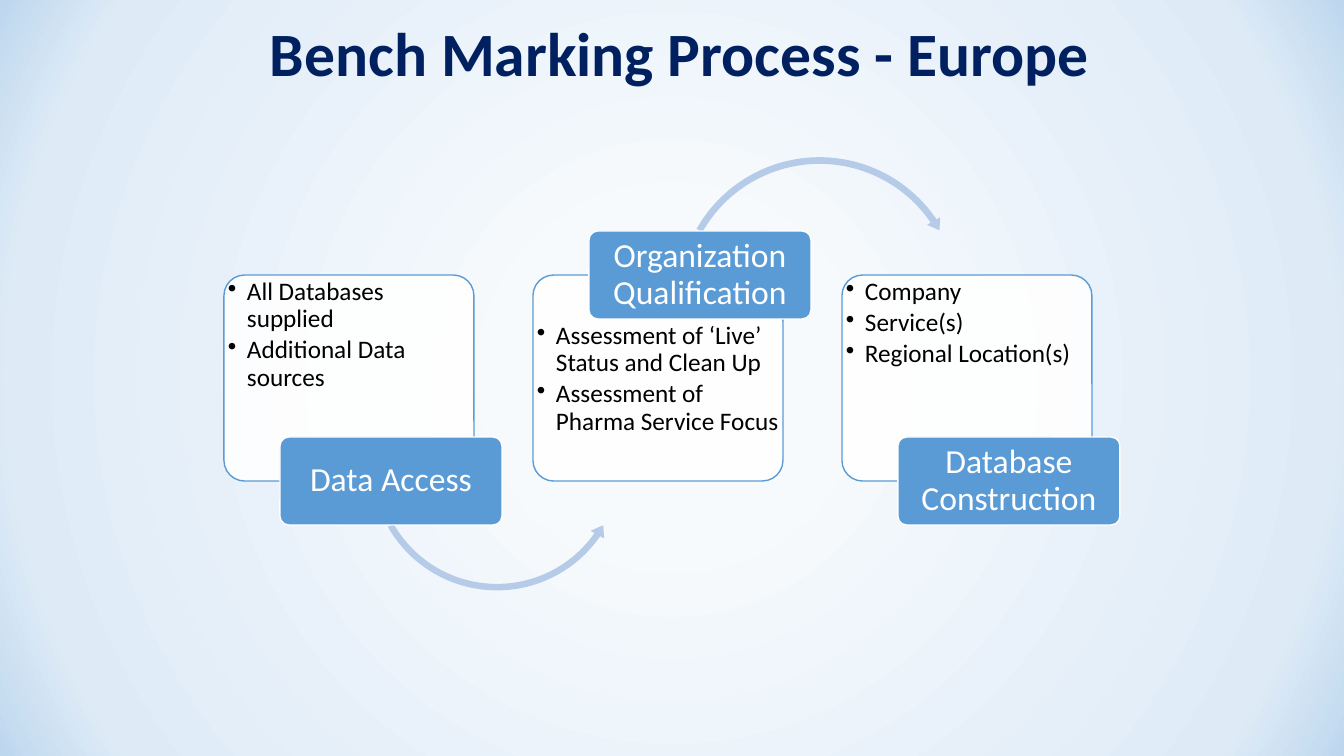
from dataclasses import dataclass

from lxml.etree import SubElement
from pptx import Presentation
from pptx.dml.color import RGBColor
from pptx.enum.shapes import MSO_SHAPE
from pptx.enum.text import MSO_ANCHOR, PP_ALIGN
from pptx.oxml import parse_xml
from pptx.oxml.ns import nsdecls, qn
from pptx.util import Pt

EMU_PER_PX = 914400 / 100.8


def px(length):
    return round(length * EMU_PER_PX)


@dataclass(frozen=True)
class Theme:
    font: str = "Calibri"
    navy: str = "002060"
    blue: str = "5B9BD5"
    pale_blue: str = "B5CBE7"
    white: str = "FFFFFF"
    black: str = "000000"
    glow: tuple = ((20, "F7FAFD"), (86, "DEEBF7"), (100, "BDD7EE"))
    title_size: int = 44
    label_size: int = 24
    body_size: int = 18


def write_text(frame, lines, *, font, size, color, bold=False, align=PP_ALIGN.LEFT,
               anchor=MSO_ANCHOR.TOP, inset=(4, 4), bullet_indent=0, space_after=0):
    """Fill a text frame with one paragraph for each line."""
    frame.word_wrap = True
    frame.vertical_anchor = anchor
    frame.margin_left = frame.margin_right = px(inset[0])
    frame.margin_top = frame.margin_bottom = px(inset[1])
    for number, line in enumerate(lines):
        paragraph = frame.add_paragraph() if number else frame.paragraphs[0]
        if bullet_indent:
            properties = paragraph._p.get_or_add_pPr()
            properties.set("marL", str(px(bullet_indent)))
            properties.set("indent", str(-px(bullet_indent)))
            SubElement(properties, qn("a:buChar")).set("char", "•")
        paragraph.alignment = align
        paragraph.line_spacing = 0.9
        paragraph.space_after = Pt(space_after)
        run = paragraph.add_run()
        run.text = line
        run.font.name = font
        run.font.size = Pt(size)
        run.font.bold = bold
        run.font.color.rgb = RGBColor.from_string(color)


class ProcessSlide:
    def __init__(self, presentation, theme):
        self.theme = theme
        self.slide = presentation.slides.add_slide(presentation.slide_layouts[6])

    def background(self):
        self.slide.background.fill.solid()
        solid = self.slide.element.find(".//" + qn("p:bgPr")).find(qn("a:solidFill"))
        stops = "".join(
            f'<a:gs pos="{percent * 1000}"><a:srgbClr val="{color}"/></a:gs>'
            for percent, color in self.theme.glow)
        glow = parse_xml(
            f'<a:gradFill {nsdecls("a")} rotWithShape="1"><a:gsLst>{stops}</a:gsLst>'
            '<a:path path="circle"><a:fillToRect l="50000" t="50000" r="50000" b="50000"/>'
            '</a:path></a:gradFill>')
        solid.getparent().replace(solid, glow)

    def text(self, lines, box, **style):
        textbox = self.slide.shapes.add_textbox(*map(px, box))
        write_text(textbox.text_frame, lines, font=self.theme.font, **style)

    def shape(self, preset, box, fill, adjustments, line=None, opacity=100):
        shape = self.slide.shapes.add_shape(preset, *map(px, box))
        shape.shadow.inherit = False
        for index, value in enumerate(adjustments):
            shape.adjustments[index] = value
        shape.fill.solid()
        shape.fill.fore_color.rgb = RGBColor.from_string(fill)
        if opacity < 100:
            color = shape.element.spPr.find(qn("a:solidFill"))[0]
            SubElement(color, qn("a:alpha")).set("val", str(opacity * 1000))
        if line:
            shape.line.color.rgb = RGBColor.from_string(line)
            shape.line.width = Pt(1)
        else:
            shape.line.fill.background()
        return shape

    def title(self, heading):
        self.text([heading], (53, 18, 1254, 77), size=self.theme.title_size,
                  color=self.theme.navy, bold=True, align=PP_ALIGN.CENTER,
                  anchor=MSO_ANCHOR.MIDDLE)

    def card(self, points, box, text_top):
        left, _, width, _ = box
        self.shape(MSO_SHAPE.ROUNDED_RECTANGLE, box, self.theme.white, [0.1],
                   line=self.theme.blue, opacity=90)
        self.text(points, (left, text_top, width, 162), size=self.theme.body_size,
                  color=self.theme.black, bullet_indent=19, space_after=2.7)

    def label(self, name, box):
        label = self.shape(MSO_SHAPE.ROUNDED_RECTANGLE, box, self.theme.blue, [0.1],
                           line=self.theme.white)
        write_text(label.text_frame, [name], font=self.theme.font,
                   size=self.theme.label_size, color=self.theme.white,
                   align=PP_ALIGN.CENTER, anchor=MSO_ANCHOR.MIDDLE, inset=(5, 3))

    def arrow(self, preset, box, adjustments):
        self.shape(preset, box, self.theme.pale_blue, adjustments)


# Steps: label, points, whether the label sits on top, arrow to the next step
STEPS = [
    ("Data Access", ["All Databases supplied", "Additional Data sources"], False,
     (MSO_SHAPE.LEFT_CIRCULAR_ARROW, (367, 335, 260, 260),
      (0.025, 3.094, 20.849, 90.245, 0.03))),
    ("Organization Qualification",
     ["Assessment of ‘Live’ Status and Clean Up", "Assessment of Pharma Service Focus"], True,
     (MSO_SHAPE.CIRCULAR_ARROW, (674, 153, 291, 291),
      (0.023, 2.738, 195.507, 125.755, 0.026))),
    ("Database Construction", ["Company", "Service(s)", "Regional Location(s)"], False, None),
]
FIRST_LEFT, STEP_PITCH = 224, 309
CARD_TOP, CARD_WIDTH, CARD_HEIGHT = 275, 250, 206
LABEL_SHIFT, LABEL_WIDTH, LABEL_HEIGHT = 56, 222, 88


def main():
    presentation = Presentation()
    presentation.slide_width, presentation.slide_height = px(1344), px(756)
    process = ProcessSlide(presentation, Theme())
    process.background()
    process.title("Bench Marking Process - Europe")

    # Each label straddles the top or bottom edge of its card
    for index, (name, points, label_on_top, arrow) in enumerate(STEPS):
        left = FIRST_LEFT + index * STEP_PITCH
        edge = CARD_TOP if label_on_top else CARD_TOP + CARD_HEIGHT
        text_top = CARD_TOP + (LABEL_HEIGHT // 2 if label_on_top else 0)
        process.card(points, (left, CARD_TOP, CARD_WIDTH, CARD_HEIGHT), text_top)
        if arrow:
            process.arrow(*arrow)
        process.label(name, (left + LABEL_SHIFT, edge - LABEL_HEIGHT // 2,
                             LABEL_WIDTH, LABEL_HEIGHT))

    presentation.save("out.pptx")


if __name__ == "__main__":
    main()
